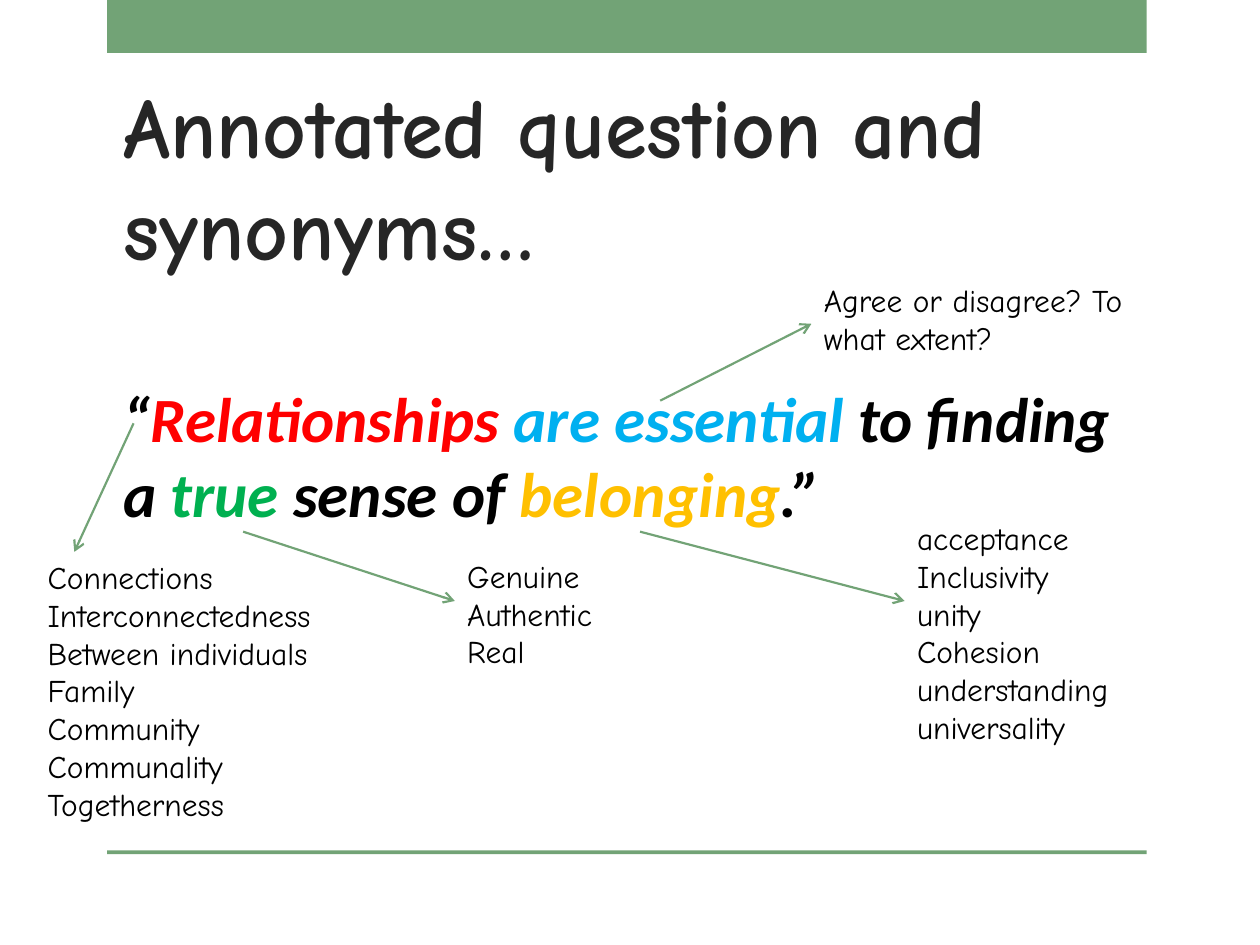
from dataclasses import dataclass

from lxml import etree
from pptx import Presentation
from pptx import util as u
from pptx.dml.color import RGBColor
from pptx.enum import shapes, text
from pptx.oxml.ns import qn

COLUMNS, ROWS = 100, 75
CELL = u.Inches(0.1)


@dataclass(frozen=True)
class Theme:
    accent: str = "72A376"
    title: str = "262626"
    body: str = "000000"
    people: str = "FF0000"
    claim: str = "00B0F0"
    quality: str = "00B050"
    outcome: str = "FFC000"
    hand_font: str = "Comic Neue"
    quote_font: str = "Calibri"
    title_size: float = 48.6
    quote_size: float = 36
    note_size: float = 18
    arrow_width: float = 1.25


@dataclass(frozen=True)
class Box:
    """A region in grid columns and rows."""
    left: float
    top: float
    width: float
    height: float

    def point(self, column, row):
        """Slide position of a point given from the box's top left corner."""
        return cells(self.left + column), cells(self.top + row)

    def bounds(self):
        return *self.point(0, 0), cells(self.width), cells(self.height)


THEME = Theme()


def cells(count):
    return u.Emu(round(count * CELL))


def add_text(slide, box, paragraphs, font, size, bold=False, italic=False,
             anchor=text.MSO_ANCHOR.TOP):
    """Each paragraph is a list of (wording, colour) runs."""
    shape = slide.shapes.add_textbox(*box.bounds())
    frame = shape.text_frame
    frame.word_wrap = True
    frame.vertical_anchor = anchor
    for index, runs in enumerate(paragraphs):
        paragraph = frame.add_paragraph() if index else frame.paragraphs[0]
        for wording, colour in runs:
            run = paragraph.add_run()
            run.text = wording
            run.font.name = font
            run.font.size = u.Pt(size)
            run.font.bold = bold
            run.font.italic = italic
            run.font.color.rgb = RGBColor.from_string(colour)


def add_arrow(slide, start, end):
    arrow = slide.shapes.add_connector(shapes.MSO_CONNECTOR.STRAIGHT, *start, *end)
    arrow.line.color.rgb = RGBColor.from_string(THEME.accent)
    arrow.line.width = u.Pt(THEME.arrow_width)
    etree.SubElement(arrow.line._get_or_add_ln(), qn("a:tailEnd"), type="arrow")
    etree.SubElement(arrow._element.spPr, qn("a:effectLst"))


def draw_frame(slide, box):
    """Draw the top band and the thin footer rule at the edges of the box."""
    band_height, rule_height = 4.2, 0.3
    for top, height in ((0, band_height), (box.height - rule_height, rule_height)):
        bar = slide.shapes.add_shape(
            shapes.MSO_SHAPE.RECTANGLE, *box.point(0, top),
            cells(box.width), cells(height))
        bar.shadow.inherit = False
        bar.fill.solid()
        bar.fill.fore_color.rgb = RGBColor.from_string(THEME.accent)
        bar.line.fill.background()


def draw_title(slide, box):
    add_text(slide, box, [[("Annotated question and synonyms…", THEME.title)]],
             THEME.hand_font, THEME.title_size, bold=True,
             anchor=text.MSO_ANCHOR.BOTTOM)


def draw_quote(slide, box):
    runs = [
        ("“", THEME.body),
        ("Relationships ", THEME.people),
        ("are essential ", THEME.claim),
        ("to finding a ", THEME.body),
        ("true", THEME.quality),
        (" sense of ", THEME.body),
        ("belonging", THEME.outcome),
        (".”", THEME.body),
    ]
    add_text(slide, box, [runs], THEME.quote_font, THEME.quote_size,
             bold=True, italic=True)


def draw_annotation(slide, box, lines, arrow_start, arrow_end):
    """Draw a note and the arrow to it; arrow ends are relative to the box."""
    add_text(slide, box, [[(line, THEME.body)] for line in lines],
             THEME.hand_font, THEME.note_size)
    add_arrow(slide, box.point(*arrow_start), box.point(*arrow_end))


ANNOTATIONS = [
    (Box(2.8, 43.8, 27.1, 25.2),
     ["Connections", "Interconnectedness", "Between individuals", "Family",
      "Community", "Communality", "Togetherness"],
     (7.8, -10.2), (3.1, 0)),
    (Box(64.4, 21.8, 27.1, 10.1),
     ["Agree or disagree? To what extent?"],
     (-12, 10), (0, 3.9)),
    (Box(36.1, 43.7, 16.2, 16.2),
     ["Genuine", "Authentic", "Real"],
     (-16.8, -1.5), (0, 4)),
    (Box(71.8, 40.7, 19.7, 19.2),
     ["acceptance", "Inclusivity", "unity", "Cohesion", "understanding",
      "universality"],
     (-21, 1.5), (0, 7)),
]


def main():
    presentation = Presentation()
    presentation.slide_width = cells(COLUMNS)
    presentation.slide_height = cells(ROWS)
    slide = presentation.slides.add_slide(presentation.slide_layouts[6])
    draw_frame(slide, Box(8.5, 0, 82.5, 67.8))
    draw_title(slide, Box(8.8, 5, 74.2, 17.5))
    draw_quote(slide, Box(8.8, 29.6, 81.1, 41.4))
    for annotation in ANNOTATIONS:
        draw_annotation(slide, *annotation)
    presentation.save("out.pptx")


if __name__ == "__main__":
    main()
